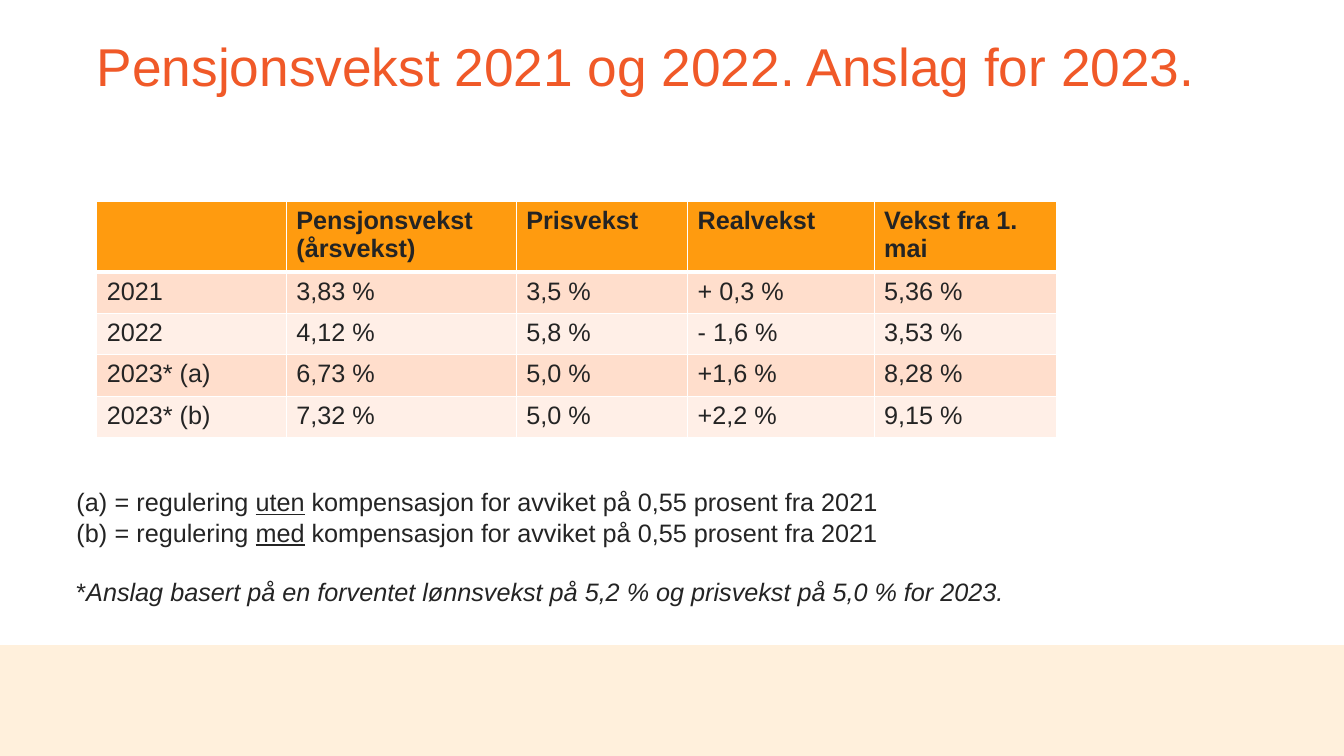
from lxml import etree
from pptx import Presentation
from pptx.dml.color import RGBColor
from pptx.enum.shapes import MSO_SHAPE
from pptx.oxml.ns import qn
from pptx.util import Inches, Pt

RECTANGLE = MSO_SHAPE.RECTANGLE
FONT = "Arial"
COLORS = {
    "title": "F05928",
    "text": "242424",
    "footer": "FFF0DC",
    "header": "FF9B0F",
    "odd_row": "FFDECC",
    "even_row": "FFEFE7",
    "border": "FFFFFF",
}


def style_run(r, size=18, color="text", bold=False):
    r.font.name = FONT
    r.font.size = Pt(size)
    r.font.bold = bold
    r.font.color.rgb = RGBColor.from_string(COLORS[color])


def add_borders(cell, bottom_width):
    """Draw cell borders, 1 pt wide except at the bottom."""
    tc_pr = cell._tc.get_or_add_tcPr()
    widths = {"a:lnL": 1, "a:lnR": 1, "a:lnT": 1, "a:lnB": bottom_width}
    for position, (tag, width) in enumerate(widths.items()):
        ln = etree.Element(qn(tag), w=str(Pt(width)))
        fill = etree.SubElement(ln, qn("a:solidFill"))
        etree.SubElement(fill, qn("a:srgbClr"), val=COLORS["border"])
        tc_pr.insert(position, ln)


prs = Presentation()
prs.slide_width = Inches(13.33)
prs.slide_height = Inches(7.5)
slide = prs.slides.add_slide(prs.slide_layouts[6])

# Footer band
band = slide.shapes.add_shape(RECTANGLE, 0, Inches(6.4), prs.slide_width, Inches(1.1))
band.shadow.inherit = False
band.fill.solid()
band.fill.fore_color.rgb = RGBColor.from_string(COLORS["footer"])
band.line.fill.background()

# Title
title = slide.shapes.add_textbox(Inches(0.96), Inches(0.4), Inches(11.42), Inches(1.18))
tf = title.text_frame
tf.word_wrap = True
tf.margin_left = tf.margin_top = tf.margin_right = tf.margin_bottom = 0
tf.text = "Pensjonsvekst 2021 og 2022. Anslag for 2023."
tf.paragraphs[0].line_spacing = 0.9
style_run(tf.paragraphs[0].runs[0], size=38, color="title")

# Growth table
growth_rows = [
    ["", "Pensjonsvekst (årsvekst)", "Prisvekst", "Realvekst", "Vekst fra 1. mai"],
    ["2021", "3,83 %", "3,5 %", "+ 0,3 %", "5,36 %"],
    ["2022", "4,12 %", "5,8 %", "- 1,6 %", "3,53 %"],
    ["2023* (a)", "6,73 %", "5,0 %", "+1,6 %", "8,28 %"],
    ["2023* (b)", "7,32 %", "5,0 %", "+2,2 %", "9,15 %"],
]
column_widths = [1.88, 2.28, 1.7, 1.85, 1.81]
table = slide.shapes.add_table(
    len(growth_rows), len(column_widths),
    Inches(0.96), Inches(2), Inches(9.53), Inches(2.32),
).table
for column, width in zip(table.columns, column_widths):
    column.width = Inches(width)

for i, values in enumerate(growth_rows):
    table.rows[i].height = Inches(0.41)
    is_header = i == 0
    row_fill = "header" if is_header else "odd_row" if i % 2 else "even_row"
    for j, value in enumerate(values):
        cell = table.cell(i, j)
        cell.fill.solid()
        cell.fill.fore_color.rgb = RGBColor.from_string(COLORS[row_fill])
        add_borders(cell, bottom_width=3 if is_header else 1)
        if value:
            cell.text = value
            style_run(cell.text_frame.paragraphs[0].runs[0], bold=is_header)
        else:
            cell.text_frame.paragraphs[0].font.size = Pt(18)

# Notes below the table
notes = slide.shapes.add_textbox(Inches(0.66), Inches(4.78), Inches(9.83), Inches(1.31))
tf = notes.text_frame
tf.word_wrap = True
for i, emphasis in enumerate(["uten", "med"]):
    p = tf.add_paragraph() if i else tf.paragraphs[0]
    p_pr = p._p.get_or_add_pPr()
    p_pr.set("marL", str(Inches(0.38)))
    p_pr.set("indent", str(Inches(-0.38)))
    etree.SubElement(p_pr, qn("a:buFont"), typeface=FONT)
    etree.SubElement(p_pr, qn("a:buAutoNum"), type="alphaLcParenBoth")
    parts = ["= regulering ", emphasis, " kompensasjon for avviket på 0,55 prosent fra 2021"]
    for part in parts:
        r = p.add_run()
        r.text = part
        style_run(r)
        r.font.underline = part == emphasis

p = tf.add_paragraph()
p.space_before = Pt(21)
for part in ["*", "Anslag basert på en forventet lønnsvekst på 5,2 % og prisvekst på 5,0 % for 2023."]:
    r = p.add_run()
    r.text = part
    style_run(r)
    r.font.italic = part != "*"

prs.save("out.pptx")
